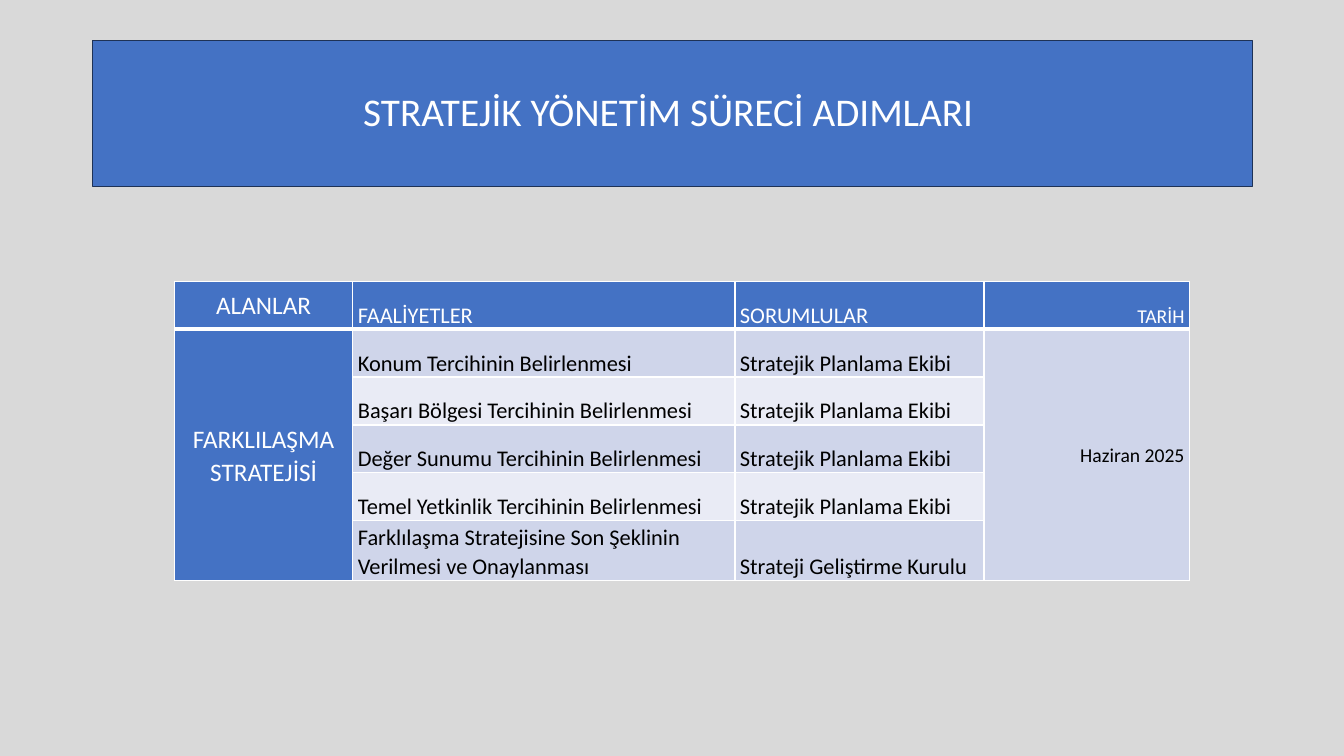
import pptx
import pptx.dml.color
import pptx.enum.text
import pptx.oxml
import pptx.oxml.ns
import pptx.util

RGBColor = pptx.dml.color.RGBColor
Inches = pptx.util.Inches
Pt = pptx.util.Pt
ALIGN = pptx.enum.text.PP_ALIGN
ANCHOR = pptx.enum.text.MSO_ANCHOR

BACKGROUND = RGBColor(0xD9, 0xD9, 0xD9)
BLUE = RGBColor(0x44, 0x72, 0xC4)
NAVY = RGBColor(0x1E, 0x32, 0x56)
BAND_DARK = RGBColor(0xCF, 0xD5, 0xEA)
BAND_LIGHT = RGBColor(0xE9, 0xEB, 0xF5)
WHITE = RGBColor(0xFF, 0xFF, 0xFF)
BLACK = RGBColor(0, 0, 0)

TITLE = "STRATEJİK YÖNETİM SÜRECİ ADIMLARI "
TEAM = "Stratejik Planlama Ekibi"
ROWS = [
    ("ALANLAR", "FAALİYETLER", "SORUMLULAR", "TARİH"),
    ("FARKLILAŞMA STRATEJİSİ", "Konum Tercihinin Belirlenmesi", TEAM, "Haziran 2025"),
    ("", "Başarı Bölgesi Tercihinin Belirlenmesi", TEAM, ""),
    ("", "Değer Sunumu Tercihinin Belirlenmesi", TEAM, ""),
    ("", "Temel Yetkinlik Tercihinin Belirlenmesi", TEAM, ""),
    ("", "Farklılaşma Stratejisine Son Şeklinin Verilmesi ve Onaylanması",
     "Strateji Geliştirme Kurulu", ""),
]
COLUMN_WEIGHTS = (1.77, 3.79, 2.47, 2.04)
ROW_SHARES = (0.16, 0.16, 0.16, 0.16, 0.16, 0.2)
COLUMN_SIZES = (18, 16, 16, 14)
COLUMN_ALIGNS = (ALIGN.CENTER, ALIGN.LEFT, ALIGN.LEFT, ALIGN.RIGHT)


def apply(target, **formats):
    """Set every given format value on the target."""
    for attribute, value in formats.items():
        setattr(target, attribute, value)


def format_text(paragraph, size, color, align, spacing):
    """Format a paragraph and its runs."""
    apply(paragraph, alignment=align, line_spacing=spacing)
    for run in paragraph.runs:
        apply(run.font, name="Calibri", size=Pt(size), bold=False)
        run.font.color.rgb = color


def add_borders(cell, widths):
    """Draw white borders of the given widths in points on a cell."""
    properties = cell._tc.get_or_add_tcPr()
    for side, width in widths.items():
        properties.append(pptx.oxml.parse_xml(
            f'<a:ln{side} {pptx.oxml.ns.nsdecls("a")} w="{Pt(width)}"><a:solidFill>'
            f'<a:srgbClr val="{WHITE}"/></a:solidFill></a:ln{side}>'))


def build_title(slide, left, top, width, height):
    """Place the title banner in its box."""
    banner = slide.shapes.title
    apply(banner, left=left, top=top, width=width, height=height)
    banner.fill.solid()
    banner.fill.fore_color.rgb = BLUE
    banner.line.color.rgb = NAVY
    banner.line.width = Pt(1)
    banner.text_frame.text = TITLE
    apply(banner.text_frame, vertical_anchor=ANCHOR.MIDDLE, word_wrap=True)
    format_text(banner.text_frame.paragraphs[0], 28, WHITE, ALIGN.CENTER, 0.9)


def build_cell(cell, row, column):
    """Fill and format one cell of the schedule."""
    header = row == 0
    accent = header or column == 0
    centred = column == 0 or (column == 3 and not header)
    cell.text = ROWS[row][column]
    apply(cell, margin_left=Inches(0.05), margin_right=Inches(0.05),
          margin_top=0, margin_bottom=0,
          vertical_anchor=ANCHOR.MIDDLE if centred else ANCHOR.BOTTOM)
    add_borders(cell, {"L": 1, "R": 1, "T": 3 if row == 1 else 1, "B": 3 if header else 1})
    cell.fill.solid()
    band = BAND_DARK if row % 2 or column == 3 else BAND_LIGHT
    cell.fill.fore_color.rgb = BLUE if accent else band
    format_text(cell.text_frame.paragraphs[0], COLUMN_SIZES[column],
                WHITE if accent else BLACK, COLUMN_ALIGNS[column], 1.07)


def build_schedule(slide, left, top, width, height):
    """Place the table of activities in its box."""
    schedule = slide.shapes.add_table(
        len(ROWS), len(COLUMN_WEIGHTS), left, top, width, height).table
    for column, weight in zip(schedule.columns, COLUMN_WEIGHTS):
        column.width = int(width * weight / sum(COLUMN_WEIGHTS))
    for row, share in zip(schedule.rows, ROW_SHARES):
        row.height = int(height * share)
    for row in range(len(ROWS)):
        for column in range(len(COLUMN_WEIGHTS)):
            build_cell(schedule.cell(row, column), row, column)
    for column in (0, 3):
        schedule.cell(1, column).merge(schedule.cell(len(ROWS) - 1, column))


def main():
    """Build the slide and save it."""
    deck = pptx.Presentation()
    apply(deck, slide_width=Inches(13.33), slide_height=Inches(7.5))
    slide = deck.slides.add_slide(deck.slide_layouts[5])
    slide.background.fill.solid()
    slide.background.fill.fore_color.rgb = BACKGROUND
    build_title(slide, Inches(0.92), Inches(0.4), Inches(11.5), Inches(1.45))
    build_schedule(slide, Inches(1.73), Inches(2.79), Inches(10.07), Inches(2.97))
    deck.save("out.pptx")


if __name__ == "__main__":
    main()
